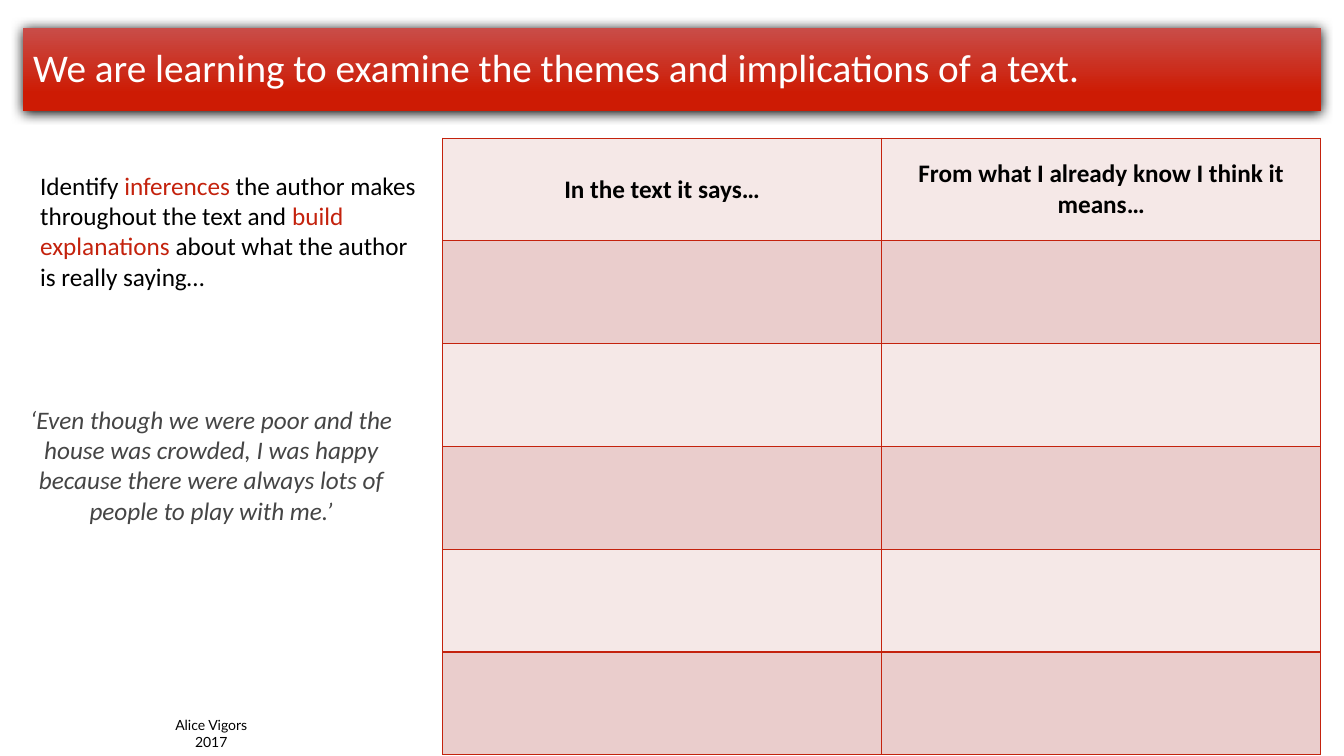
from lxml.etree import SubElement
from pptx import Presentation
from pptx.dml.color import RGBColor
from pptx.enum.shapes import MSO_SHAPE as Shape
from pptx.enum.text import MSO_ANCHOR as Anchor, PP_ALIGN as Align
from pptx.oxml.ns import qn
from pptx.util import Inches, Pt

WIDTH, HEIGHT = Inches(13.33), Inches(7.5)
RED, BLACK, WHITE, GREY = "C4220D", "000000", "FFFFFF", "454545"
ROW_FILLS = ["F5E8E7", "EACDCC"]
HEADINGS = ["In the text it says…", "From what I already know I think it means…"]
ROWS = 6


def color(value):
    return RGBColor.from_string(value)


def box(left, top, width, height):
    """Turn percentages of the slide into lengths."""
    return (int(WIDTH * left / 100), int(HEIGHT * top / 100),
            int(WIDTH * width / 100), int(HEIGHT * height / 100))


def write(paragraph, parts, align=Align.LEFT, **font_format):
    """Add (text, colour) parts that share one font format."""
    paragraph.alignment = align
    for text, text_color in parts:
        run = paragraph.add_run()
        run.text = text
        for name, value in ({"name": "Calibri", "size": Pt(18)} | font_format).items():
            setattr(run.font, name, value)
        run.font.color.rgb = color(text_color)


def add_text(slide, place, parts, **text_format):
    frame = slide.shapes.add_textbox(*box(*place)).text_frame
    frame.word_wrap = True
    write(frame.paragraphs[0], parts, **text_format)


def add_shadow(shape, blur, distance):
    """Give the shape a black shadow that falls straight down."""
    shape.shadow.inherit = False
    effects = shape._element.spPr.find(qn("a:effectLst"))
    shadow = SubElement(effects, qn("a:outerShdw"), blurRad=str(Pt(blur)),
                        dist=str(Pt(distance)), dir="5400000", rotWithShape="0")
    SubElement(shadow, qn("a:srgbClr"), val=BLACK)


def add_banner(slide, place, text):
    banner = slide.shapes.add_shape(Shape.RECTANGLE, *box(*place))
    banner.line.fill.background()
    banner.fill.gradient()
    banner.fill.gradient_angle = 270
    stops = [(0, "C94D48"), (0.78, "CD1B04")]
    for stop, (position, stop_color) in zip(banner.fill.gradient_stops, stops):
        stop.position = position
        stop.color.rgb = color(stop_color)
    add_shadow(banner, blur=8.5, distance=1)
    frame = banner.text_frame
    frame.word_wrap = True
    frame.vertical_anchor = Anchor.MIDDLE
    frame.paragraphs[0].line_spacing = 0.9
    write(frame.paragraphs[0], [(text, WHITE)], size=Pt(28))


def add_borders(cell, line_color, width):
    properties = cell._tc.get_or_add_tcPr()
    for side in ("lnL", "lnR", "lnT", "lnB"):
        line = SubElement(properties, qn(f"a:{side}"), w=str(Pt(width)))
        fill = SubElement(line, qn("a:solidFill"))
        SubElement(fill, qn("a:srgbClr"), val=line_color)


def add_response_table(slide, place, headings):
    table = slide.shapes.add_table(ROWS, len(headings), *box(*place)).table
    for row_number, row in enumerate(table.rows):
        for cell in row.cells:
            add_borders(cell, RED, 1)
            cell.fill.solid()
            cell.fill.fore_color.rgb = color(ROW_FILLS[row_number % 2])
            cell.vertical_anchor = Anchor.MIDDLE
    for cell, heading in zip(table.rows[0].cells, headings):
        write(cell.text_frame.paragraphs[0], [(heading, BLACK)], Align.CENTER, bold=True)


def main():
    presentation = Presentation()
    presentation.slide_width, presentation.slide_height = WIDTH, HEIGHT
    slide = presentation.slides.add_slide(presentation.slide_layouts[6])

    # Learning goal and response table
    add_banner(slide, (1.73, 3.73, 96.55, 10.93),
               "We are learning to examine the themes and implications of a text.")
    add_response_table(slide, (32.93, 18.27, 65.34, 81.6), HEADINGS)

    # Quotation, task and author
    add_text(slide, (0.98, 52.8, 29.48, 21.6),
             [("‘Even though we were poor and the house was crowded, I was happy "
               "because there were always lots of people to play with me.’", GREY)],
             align=Align.CENTER, italic=True)
    add_text(slide, (2.25, 21.87, 30.23, 17.47),
             [("Identify ", BLACK), ("inferences", RED),
              (" the author makes throughout the text and ", BLACK),
              ("build explanations ", RED),
              ("about what the author is really saying…", BLACK)])
    add_text(slide, (11.7, 94.13, 8.03, 5.87), [("Alice Vigors 2017", BLACK)],
             align=Align.CENTER, name="Lato", size=Pt(10))

    presentation.save("out.pptx")


if __name__ == "__main__":
    main()
